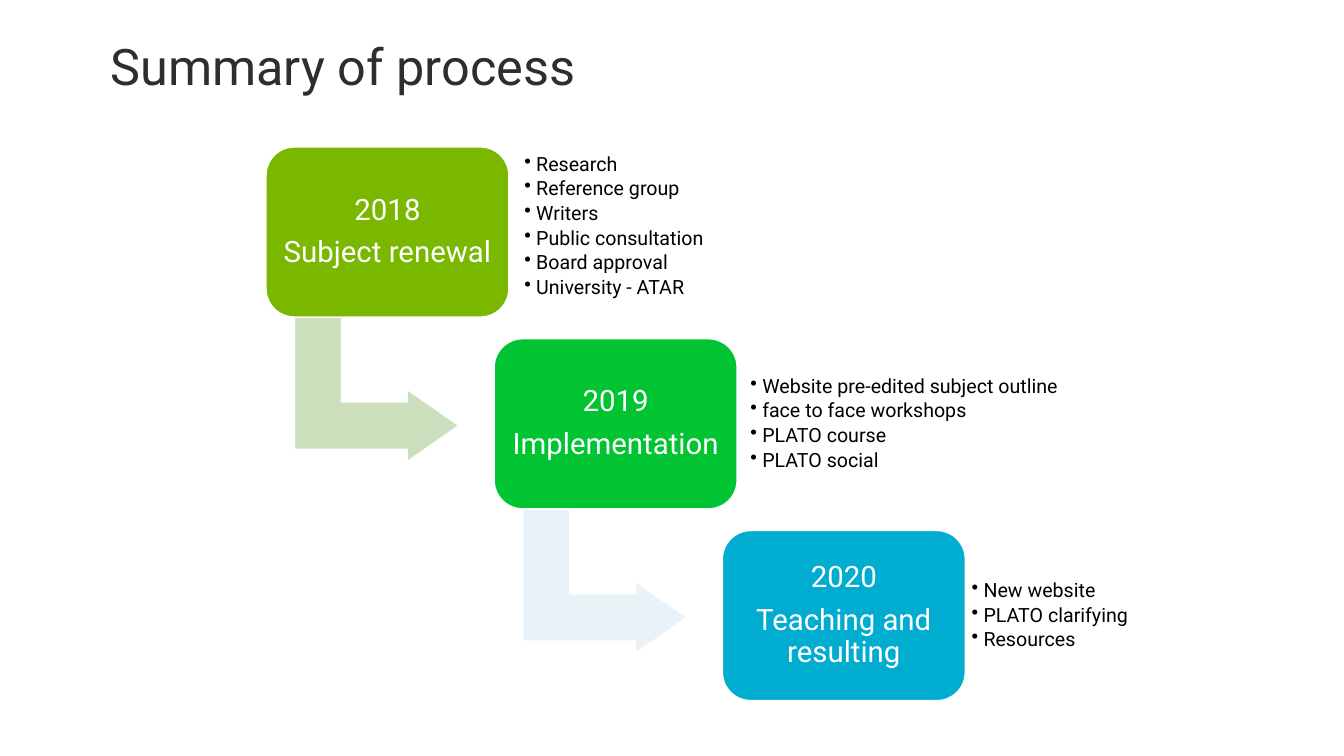
from pptx import Presentation, util as u
from pptx.dml.color import RGBColor
from pptx.enum import shapes, text
from pptx.oxml.ns import qn
from lxml import etree

PX = 6350
STAGE_WIDTH, STAGE_HEIGHT = 347, 243
STEP_X, STEP_Y = 326, 274

STAGES = [
    {"lines": ["2018", "Subject renewal"], "fill": "7AB800", "arrow": "CBDFBD",
     "list_box": (360, 29, 410), "bottom": 37,
     "items": ["Research", "Reference group", "Writers", "Public consultation",
               "Board approval", "University - ATAR"]},
    {"lines": ["2019", "Implementation"], "fill": "00C432", "arrow": "E8F2F7",
     "list_box": (357, 23, 475), "bottom": 9,
     "items": ["Website pre-edited subject outline", "face to face workshops",
               "PLATO course", "PLATO social"]},
    {"lines": ["2020", "Teaching and resulting"], "fill": "00ADD0", "arrow": None,
     "list_box": (347, 23, 253), "bottom": 9,
     "items": ["New website", "PLATO clarifying", "Resources"]},
]


def px(*lengths):
    """Turn pixel lengths into EMU."""
    return [u.Emu(length * PX) for length in lengths]


def color(value):
    """Turn a hex string into a colour."""
    return RGBColor.from_string(value)


def add_bullet(paragraph, indent):
    """Give a paragraph a hanging bullet."""
    properties = paragraph._p.get_or_add_pPr()
    properties.set("marL", str(indent * PX))
    properties.set("indent", str(-indent * PX))
    etree.SubElement(properties, qn("a:buChar")).set("char", "•")


def write(shape, lines, size, ink, align=text.PP_ALIGN.LEFT, after=0,
          insets=(9, 9, 9, 9), bullet=0):
    """Fill a shape with formatted paragraphs, centred vertically."""
    frame = shape.text_frame
    frame.word_wrap = True
    frame.vertical_anchor = text.MSO_ANCHOR.MIDDLE
    (frame.margin_left, frame.margin_top,
     frame.margin_right, frame.margin_bottom) = px(*insets)
    for index, line in enumerate(lines):
        paragraph = frame.add_paragraph() if index else frame.paragraphs[0]
        paragraph.alignment = align
        paragraph.line_spacing = 0.9
        paragraph.space_after = u.Pt(after)
        if bullet:
            add_bullet(paragraph, bullet)
        run = paragraph.add_run()
        run.text = line
        run.font.name = "Roboto"
        run.font.size = u.Pt(size)
        run.font.color.rgb = color(ink)


def add_block(slide, kind, box, fill, adjustments):
    """Draw a filled preset shape with a white outline."""
    shape = slide.shapes.add_shape(kind, *px(*box))
    shape.shadow.inherit = False
    shape.fill.solid()
    shape.fill.fore_color.rgb = color(fill)
    shape.line.color.rgb = color("FFFFFF")
    shape.line.width = u.Pt(1)
    for index, value in enumerate(adjustments):
        shape.adjustments[index] = value
    return shape


def add_title(slide, box, title):
    """Place the slide title."""
    write(slide.shapes.add_textbox(*px(*box)), [title], 36, "2D2E2F",
          insets=(14, 7, 14, 7))


def add_stage(slide, left, top, stage):
    """Place one stage with its bullet list and the arrow to the next stage."""
    if stage["arrow"]:
        arrow = add_block(slide, shapes.MSO_SHAPE.BENT_UP_ARROW,
                          (left + 55, top + 229, 206, 235), stage["arrow"],
                          (0.328, 0.25, 0.358))
        arrow.rotation = 90
    card = add_block(slide, shapes.MSO_SHAPE.ROUNDED_RECTANGLE,
                     (left, top, STAGE_WIDTH, STAGE_HEIGHT), stage["fill"], (0.167,))
    write(card, stage["lines"], 21, "FFFFFF", align=text.PP_ALIGN.CENTER,
          after=8, insets=(10, 13, 10, 13))
    offset_x, offset_y, width = stage["list_box"]
    items = slide.shapes.add_textbox(*px(left + offset_x, top + offset_y, width, 197))
    write(items, stage["items"], 14, "000000", after=2.5,
          insets=(9, 9, 9, stage["bottom"]), bullet=17)


def main():
    """Build and save the slide."""
    presentation = Presentation()
    presentation.slide_width, presentation.slide_height = px(1920, 1080)
    slide = presentation.slides.add_slide(presentation.slide_layouts[6])
    for index, stage in enumerate(STAGES):
        add_stage(slide, 380 + index * STEP_X, 210 + index * STEP_Y, stage)
    add_title(slide, (144, 32, 1680, 135), "Summary of process")
    presentation.save("out.pptx")


if __name__ == "__main__":
    main()
